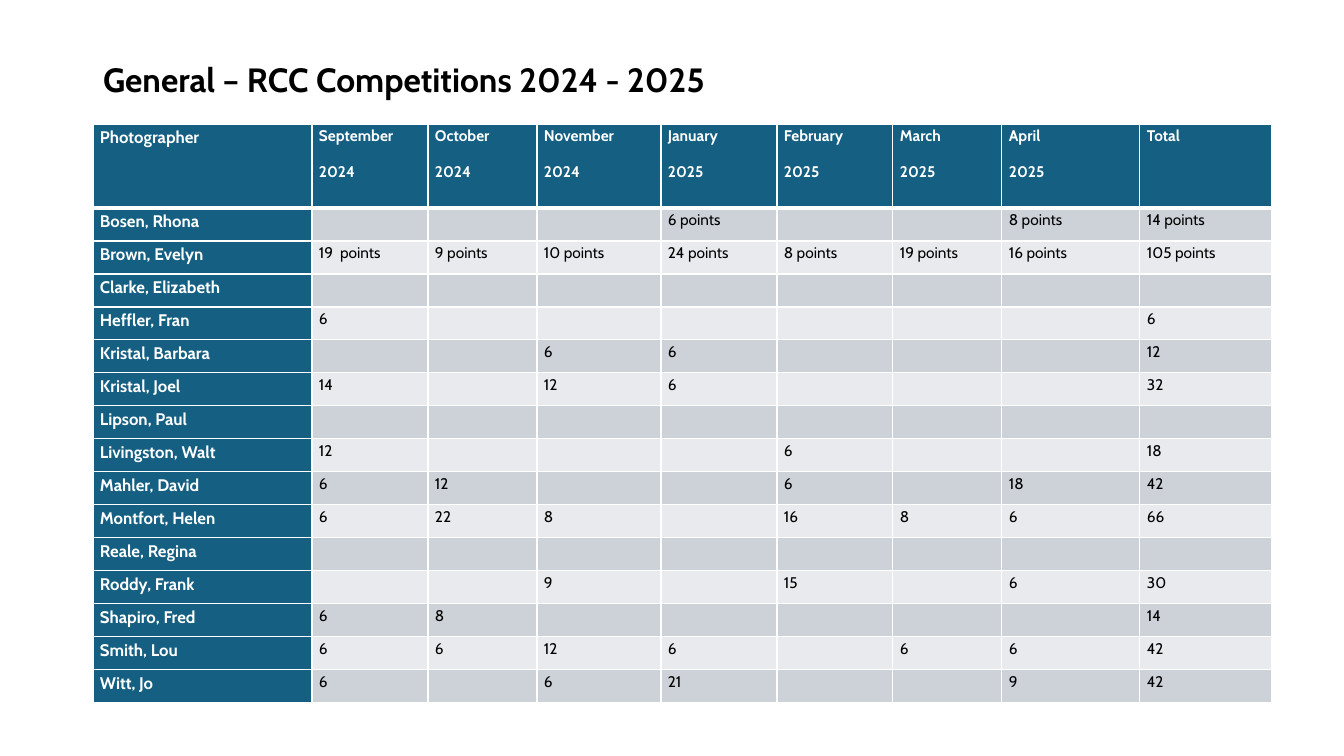
from lxml import etree
from pptx import Presentation
from pptx.dml.color import RGBColor
from pptx.enum.text import MSO_ANCHOR, PP_ALIGN
from pptx.oxml.ns import qn
from pptx.util import Pt

LEFT = PP_ALIGN.LEFT
MIDDLE = MSO_ANCHOR.MIDDLE
TITLE_ONLY = 5
PX = 914400 / 100.8
FONT = "Cabin"
COLORS = {
    "heading": "156082",
    "odd_row": "CCD2D8",
    "even_row": "E8EAED",
    "light": "FFFFFF",
    "dark": "000000",
}
COLUMN_WIDTHS = [219, 116, 109, 124, 116, 116, 109, 138, 132]
HEADER_HEIGHT = 84
ROW_HEIGHT = 33
SIDE_MARGIN = 7
HEADINGS = [
    "Photographer", "September\n2024", "October\n2024", "November\n2024",
    "January\n2025", "February\n2025", "March\n2025", "April\n2025", "Total",
]
SCORES = [
    ["Bosen, Rhona", "", "", "", "6 points", "", "", "8 points", "14 points"],
    ["Brown, Evelyn", "19  points", "9 points", "10 points", "24 points",
     "8 points", "19 points", "16 points", "105 points"],
    ["Clarke, Elizabeth", "", "", "", "", "", "", "", ""],
    ["Heffler, Fran", "6", "", "", "", "", "", "", "6"],
    ["Kristal, Barbara", "", "", "6", "6", "", "", "", "12"],
    ["Kristal, Joel", "14", "", "12", "6", "", "", "", "32"],
    ["Lipson, Paul", "", "", "", "", "", "", "", ""],
    ["Livingston, Walt", "12", "", "", "", "6", "", "", "18"],
    ["Mahler, David", "6", "12", "", "", "6", "", "18", "42"],
    ["Montfort, Helen", "6", "22", "8", "", "16", "8", "6", "66"],
    ["Reale, Regina", "", "", "", "", "", "", "", ""],
    ["Roddy, Frank", "", "", "9", "", "15", "", "6", "30"],
    ["Shapiro, Fred", "6", "8", "", "", "", "", "", "14"],
    ["Smith, Lou", "6", "6", "12", "6", "", "6", "6", "42"],
    ["Witt, Jo", "6", "", "6", "21", "", "", "9", "42"],
]


def px(length):
    return round(length * PX)


def color(name):
    return RGBColor.from_string(COLORS[name])


def set_font(para, size, color_name, bold):
    para.font.name = FONT
    para.font.size = Pt(size)
    para.font.bold = bold
    para.font.color.rgb = color(color_name)


def add_title(page, text):
    title = page.shapes.title
    title.left, title.top = px(93), px(40)
    title.width, title.height = px(1124), px(84)
    title.text_frame.text = text
    title.text_frame.vertical_anchor = MIDDLE
    para = title.text_frame.paragraphs[0]
    para.alignment = LEFT
    para.line_spacing = 0.9
    set_font(para, 24, "dark", True)


def set_borders(cell, top, bottom):
    properties = cell._tc.get_or_add_tcPr()
    widths = {"a:lnL": 1, "a:lnR": 1, "a:lnT": top, "a:lnB": bottom}
    for tag, width in widths.items():
        line = etree.SubElement(properties, qn(tag), w=str(Pt(width)))
        fill = etree.SubElement(line, qn("a:solidFill"))
        etree.SubElement(fill, qn("a:srgbClr"), val=COLORS["light"])


def format_cell(cell, text, row, column):
    heading = row == 0 or column == 0
    set_borders(cell, 3 if row == 1 else 1, 3 if row == 0 else 1)
    band = "odd_row" if row % 2 else "even_row"
    cell.fill.solid()
    cell.fill.fore_color.rgb = color("heading" if heading else band)
    cell.margin_left = cell.margin_right = px(SIDE_MARGIN)
    cell.margin_top = cell.margin_bottom = 0
    cell.text = text
    for para in cell.text_frame.paragraphs:
        para.line_spacing = 1.15
        para.space_after = Pt(10)
        set_font(para, 11 if column else 12, "light" if heading else "dark", heading)


def add_score_table(page, rows):
    height = HEADER_HEIGHT + ROW_HEIGHT * (len(rows) - 1)
    frame = page.shapes.add_table(
        len(rows), len(COLUMN_WIDTHS), px(93), px(124),
        px(sum(COLUMN_WIDTHS)), px(height))
    table = frame.table
    table.horz_banding = False
    for column, width in zip(table.columns, COLUMN_WIDTHS):
        column.width = px(width)
    for row, texts in enumerate(rows):
        table.rows[row].height = px(ROW_HEIGHT if row else HEADER_HEIGHT)
        for column, text in enumerate(texts):
            format_cell(table.cell(row, column), text, row, column)


def main():
    deck = Presentation()
    deck.slide_width, deck.slide_height = px(1344), px(756)
    page = deck.slides.add_slide(deck.slide_layouts[TITLE_ONLY])
    add_title(page, "General – RCC Competitions 2024 - 2025")
    add_score_table(page, [HEADINGS] + SCORES)
    deck.save("out.pptx")


if __name__ == "__main__":
    main()
